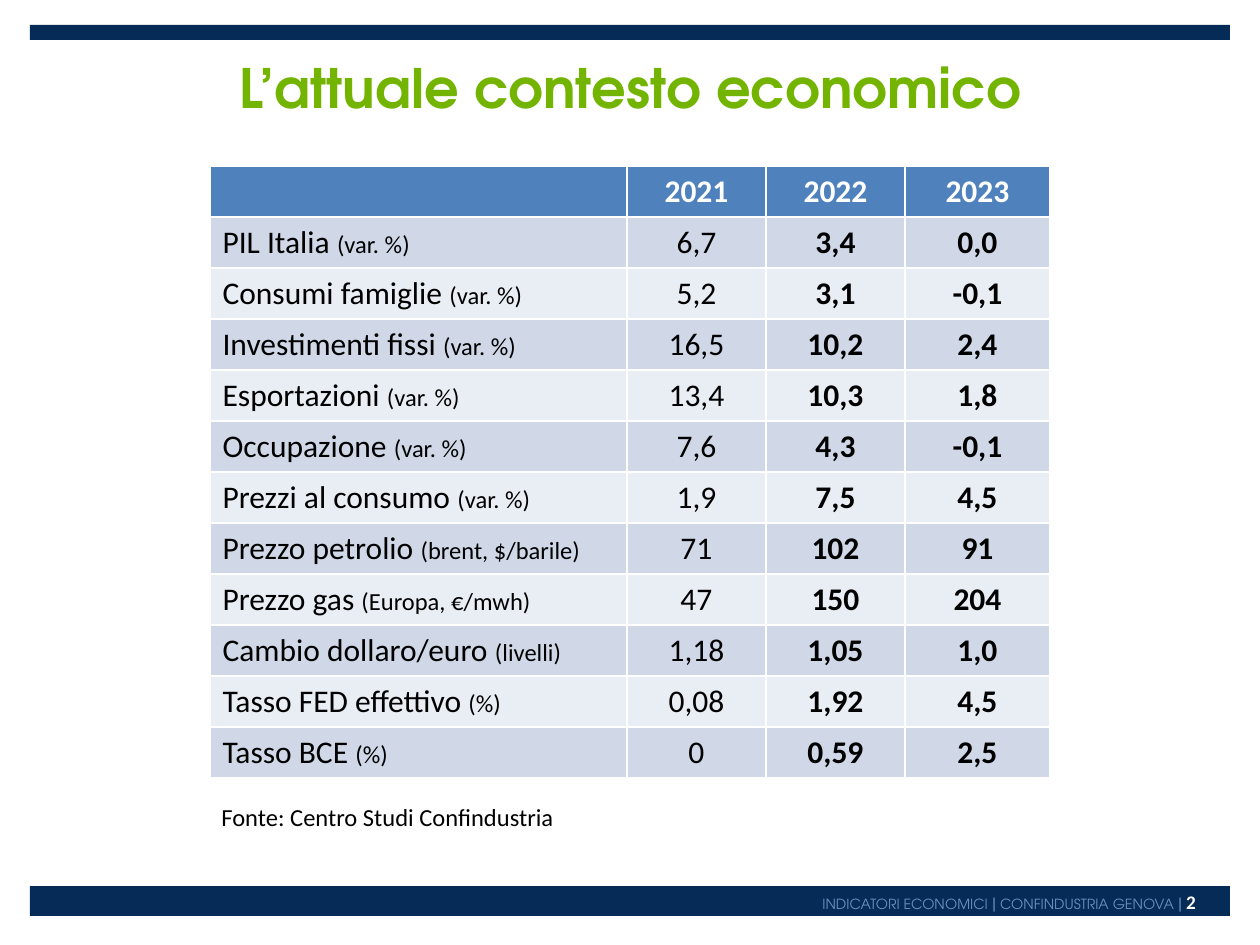
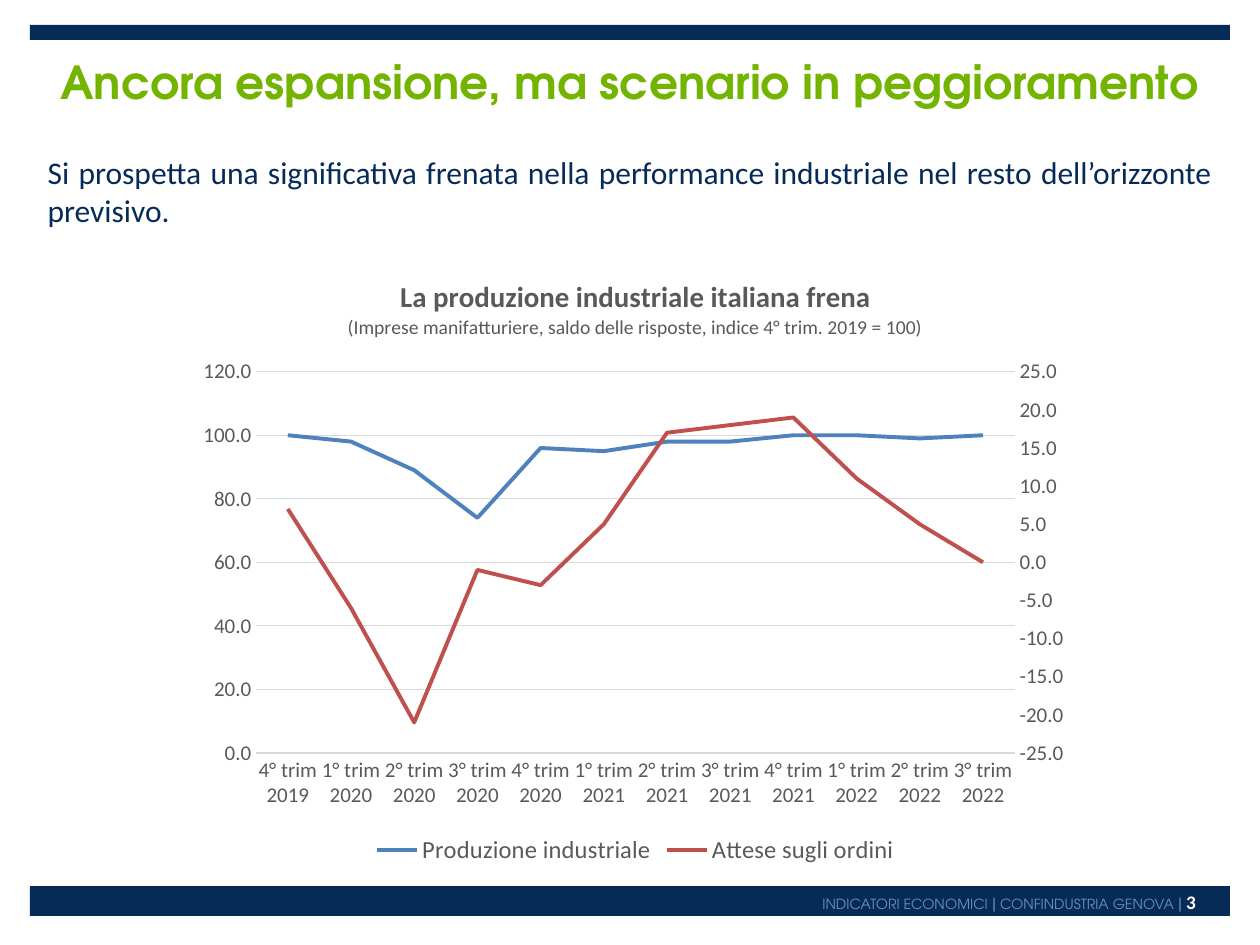
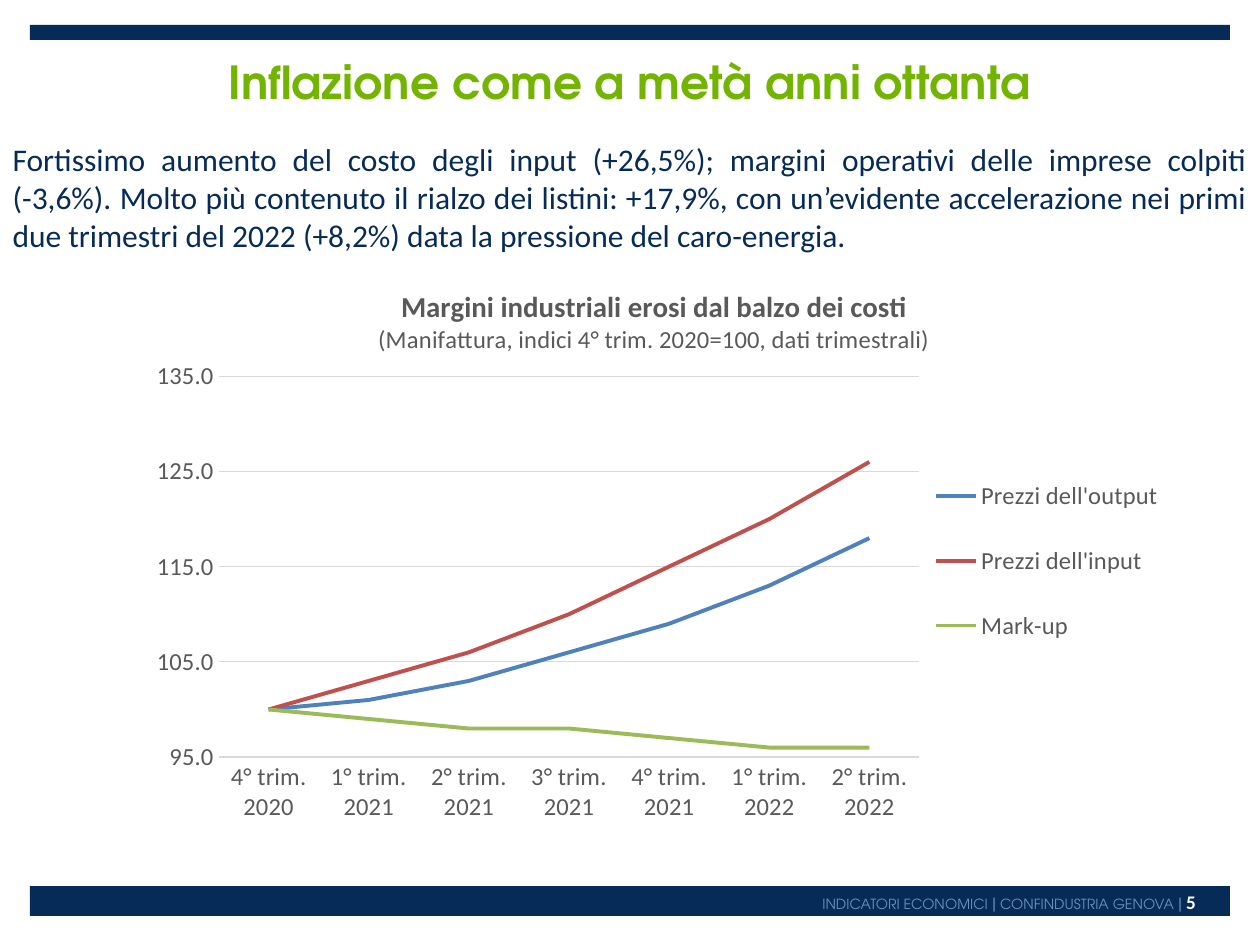
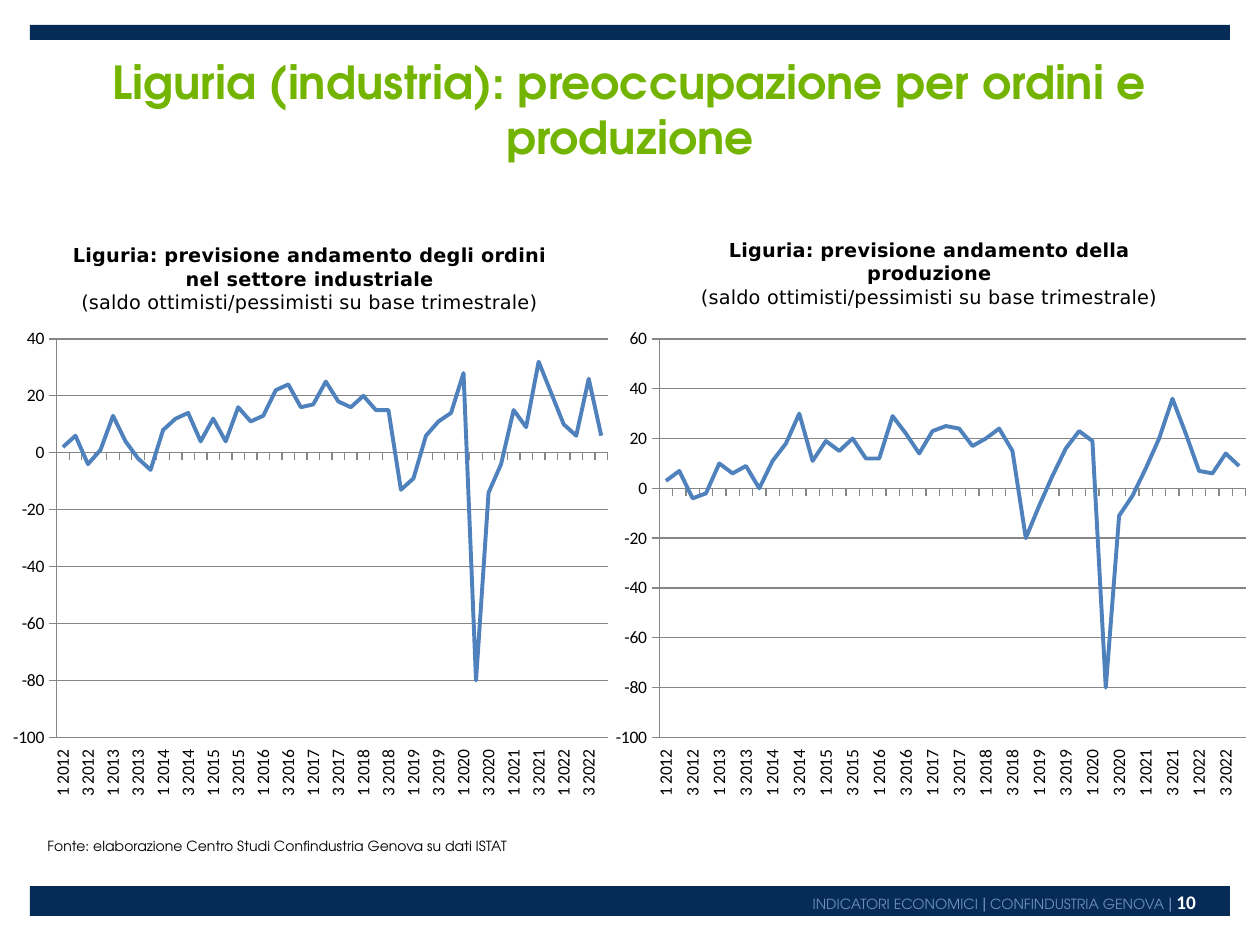
from copy import deepcopy

from lxml import etree
from pptx import Presentation
from pptx.chart.data import CategoryChartData
from pptx.dml.color import RGBColor
from pptx.enum.chart import (XL_CHART_TYPE, XL_LEGEND_POSITION,
                             XL_TICK_LABEL_POSITION, XL_TICK_MARK)
from pptx.enum.shapes import MSO_SHAPE
from pptx.enum.text import MSO_ANCHOR, MSO_AUTO_SIZE, PP_ALIGN
from pptx.oxml.ns import qn
from pptx.util import Emu, Pt

LINE = XL_CHART_TYPE.LINE
BOTTOM = XL_LEGEND_POSITION.BOTTOM
LOW = XL_TICK_LABEL_POSITION.LOW
TICK_NONE, TICK_OUT = XL_TICK_MARK.NONE, XL_TICK_MARK.OUTSIDE
RECT = MSO_SHAPE.RECTANGLE
TOP = MSO_ANCHOR.TOP
NO_FIT = MSO_AUTO_SIZE.NONE
LEFT, CENTER, RIGHT, JUSTIFY = (PP_ALIGN.LEFT, PP_ALIGN.CENTER,
                                PP_ALIGN.RIGHT, PP_ALIGN.JUSTIFY)

COLORS = {
    "navy": "062B57", "green": "73B400", "footer": "6D90BE",
    "white": "FFFFFF", "black": "000000", "gray": "595959",
    "grid": "D9D9D9", "axis": "868686",
    "blue": "4F81BD", "red": "C0504D", "olive": "9BBB59",
    "row_dark": "D0D8E8", "row_light": "E9EDF4",
}
SERIES_COLORS = ("blue", "red", "olive")
HEAD_FONT, TEXT_FONT, CHART_FONT = "TeX Gyre Adventor", "Calibri", "DejaVu Sans"
TITLE_ONLY, TITLE_AND_BODY = 5, 1


def px(length):
    return Emu(round(length * 914400 / 126))


def rgb(name):
    return RGBColor.from_string(COLORS[name])


def style(font, size, color, face=TEXT_FONT, bold=False):
    font.size, font.name, font.bold = Pt(size), face, bold
    font.color.rgb = rgb(color)


def set_layout(parent, after, inner=False, **place):
    """Place a chart part by fractions of the chart's size."""
    layout = parent.find(qn("c:layout"))
    if layout is None:
        layout = etree.Element(qn("c:layout"))
        if after is None:
            parent.insert(0, layout)
        else:
            parent.find(qn(after)).addnext(layout)
    for child in list(layout):
        layout.remove(child)
    manual = etree.SubElement(layout, qn("c:manualLayout"))
    if inner:
        etree.SubElement(manual, qn("c:layoutTarget"), val="inner")
    for mode in ("xMode", "yMode"):
        etree.SubElement(manual, qn("c:" + mode), val="edge")
    for key, value in place.items():
        etree.SubElement(manual, qn("c:" + key), val=str(value))


class Deck:
    """Holds the house style and the slide being built."""

    def __init__(self):
        self.prs = Presentation()
        self.prs.slide_width, self.prs.slide_height = px(1260), px(945)
        self.slide = None

    def new_slide(self, number, title, title_size=26, title_height=81,
                  layout=TITLE_ONLY):
        self.slide = self.prs.slides.add_slide(self.prs.slide_layouts[layout])
        self.band(25, 15)
        self.band(886, 30)
        self.footer(number)
        self.fill_placeholder(self.slide.shapes.title, (35, 48, 1190, title_height),
                              title, CENTER)
        style(self.slide.shapes.title.text_frame.paragraphs[0].font,
              title_size, "green", HEAD_FONT, True)

    def band(self, top, height):
        band = self.slide.shapes.add_shape(RECT, px(30), px(top), px(1200), px(height))
        band.shadow.inherit = False
        band.fill.solid()
        band.fill.fore_color.rgb = rgb("navy")
        band.line.fill.background()

    def footer(self, number):
        frame = self.slide.shapes.add_textbox(px(480), px(887), px(716), px(35)).text_frame
        frame.word_wrap = True
        frame.margin_left = frame.margin_right = frame.margin_top = frame.margin_bottom = 0
        line = frame.paragraphs[0]
        line.alignment, line.line_spacing = RIGHT, 1.15
        for text, size in (("INDICATORI ECONOMICI ", 8), ("|", 10),
                           (" CONFINDUSTRIA GENOVA ", 8), ("|", 10), (" ", 8)):
            run = line.add_run()
            run.text = text
            style(run.font, size, "footer", HEAD_FONT)
        page = line.add_run()
        page.text = str(number)
        style(page.font, 11, "white", bold=True)

    def fill_placeholder(self, holder, box, text, align):
        holder.left, holder.top, holder.width, holder.height = map(px, box)
        frame = holder.text_frame
        frame.text = text
        frame.word_wrap, frame.auto_size = True, NO_FIT
        frame.vertical_anchor = TOP
        frame.paragraphs[0].alignment = align
        return frame.paragraphs[0]

    def body(self, box, text):
        para = self.fill_placeholder(self.slide.placeholders[1], box, text, JUSTIFY)
        para.space_before = Pt(0)
        props = para._p.get_or_add_pPr()
        props.set("marL", "0")
        props.set("indent", "0")
        etree.SubElement(props, qn("a:buNone"))
        style(para.font, 18, "navy")

    def source(self, box, text, size, face=TEXT_FONT, spacing=1.0):
        frame = self.slide.shapes.add_textbox(*map(px, box)).text_frame
        frame.word_wrap = True
        frame.text = text
        para = frame.paragraphs[0]
        para.line_spacing = spacing
        style(para.font, size, "black", face)

    def table(self, left, top, widths, row_height, header, rows):
        grid = self.slide.shapes.add_table(
            len(rows) + 1, len(widths), px(left), px(top),
            px(sum(widths)), px(row_height * (len(rows) + 1))).table
        for column, width in zip(grid.columns, widths):
            column.width = px(width)
        for r, row in enumerate([header] + rows):
            grid.rows[r].height = px(row_height)
            fill = "blue" if r == 0 else "row_dark" if r % 2 else "row_light"
            for c, content in enumerate(row):
                cell = grid.cell(r, c)
                cell.fill.solid()
                cell.fill.fore_color.rgb = rgb(fill)
                para = cell.text_frame.paragraphs[0]
                para.alignment = CENTER if c else LEFT
                if c or r == 0:
                    para.text = content
                    style(para.font, 18, "black" if r else "white",
                          bold=r == 0 or c > 1)
                    continue
                # Row label with its unit in smaller type
                for text, size in zip(content, (18, 14)):
                    run = para.add_run()
                    run.text = text
                    style(run.font, size, "black")

    def line_chart(self, box, title, categories, series, scale, plot,
                   label_size, number_format="0.0", dense=False, title_at=None):
        data = CategoryChartData(number_format=number_format)
        data.categories = categories
        for name, values in series:
            data.add_series(name, values)
        chart = self.slide.shapes.add_chart(LINE, *map(px, box), data).chart
        ink = "black" if dense else "gray"
        style(chart.font, label_size, ink)
        chart.has_legend = False
        chart.plots[0].vary_by_categories = False
        for line, color in zip(chart.plots[0].series, SERIES_COLORS):
            line.smooth = False
            line.format.line.color.rgb = rgb(color)
            line.format.line.width = Pt(2.25)
        self.chart_title(chart, title, ink, CHART_FONT if dense else TEXT_FONT, title_at)
        self.chart_axes(chart, scale, label_size, number_format, dense)
        set_layout(chart._chartSpace.chart.plotArea, None, True,
                   **dict(zip("xywh", plot)))
        return chart

    def chart_title(self, chart, lines, ink, face, place):
        frame = chart.chart_title.text_frame
        for i, (text, size, bold) in enumerate(lines):
            para = frame.add_paragraph() if i else frame.paragraphs[0]
            run = para.add_run()
            run.text = text
            style(para.font, size, ink, face, bold)
            style(run.font, size, ink, face, bold)
        chart.chart_title.include_in_layout = False
        if place:
            set_layout(chart.chart_title._element, "c:tx", **dict(zip("xy", place)))

    def chart_axes(self, chart, scale, size, number_format, dense):
        values, periods = chart.value_axis, chart.category_axis
        values.minimum_scale, values.maximum_scale, values.major_unit = scale
        values.has_major_gridlines = True
        values.tick_labels.number_format = number_format
        values.tick_labels.number_format_is_linked = False
        rule = "axis" if dense else "grid"
        for axis in (values, periods):
            axis.major_tick_mark = TICK_OUT if dense else TICK_NONE
            axis.minor_tick_mark = TICK_NONE
            style(axis.tick_labels.font, size, "black" if dense else "gray")
        for line in (values.major_gridlines.format.line, periods.format.line):
            line.color.rgb = rgb(rule)
            line.width = Pt(0.75)
        if dense:
            values.format.line.color.rgb = rgb(rule)
            periods.tick_label_position = LOW
            turned = periods._element.find(qn("c:txPr")).find(qn("a:bodyPr"))
            turned.set("rot", "-5400000")
            turned.set("vert", "horz")
        else:
            values.format.line.fill.background()

    def legend(self, chart, **place):
        chart.has_legend = True
        chart.legend.position = BOTTOM
        chart.legend.include_in_layout = False
        style(chart.legend.font, 14, "gray")
        if place:
            set_layout(chart.legend._element, "c:legendPos", **place)

    def second_axis(self, chart, scale):
        """Move the last series to its own value axis on the right."""
        area = chart._chartSpace.chart.plotArea
        first = area.find(qn("c:lineChart"))
        second = deepcopy(first)
        first.remove(first.findall(qn("c:ser"))[-1])
        for ser in second.findall(qn("c:ser"))[:-1]:
            second.remove(ser)
        first.addnext(second)
        periods, values = (deepcopy(area.find(qn(tag))) for tag in ("c:catAx", "c:valAx"))
        area.find(qn("c:valAx")).addnext(values)
        values.addnext(periods)
        for ref, number in zip(second.findall(qn("c:axId")), ("5001", "5002")):
            ref.set("val", number)
        for axis, own, other in ((periods, "5001", "5002"), (values, "5002", "5001")):
            axis.find(qn("c:axId")).set("val", own)
            axis.find(qn("c:crossAx")).set("val", other)
        periods.find(qn("c:delete")).set("val", "1")
        values.find(qn("c:axPos")).set("val", "r")
        values.find(qn("c:crosses")).set("val", "max")
        values.remove(values.find(qn("c:majorGridlines")))
        scaling = values.find(qn("c:scaling"))
        for tag, value in zip(("c:min", "c:max"), scale):
            scaling.find(qn(tag)).set("val", str(value))
        values.find(qn("c:majorUnit")).set("val", str(scale[2]))


def context_slide(deck):
    deck.new_slide(2, "L’attuale contesto economico", title_size=31)
    var = "(var. %)"
    indicators = [
        ("PIL Italia ", var, "6,7", "3,4", "0,0"),
        ("Consumi famiglie ", var, "5,2", "3,1", "-0,1"),
        ("Investimenti fissi ", var, "16,5", "10,2", "2,4"),
        ("Esportazioni ", var, "13,4", "10,3", "1,8"),
        ("Occupazione ", var, "7,6", "4,3", "-0,1"),
        ("Prezzi al consumo ", var, "1,9", "7,5", "4,5"),
        ("Prezzo petrolio ", "(brent, $/barile)", "71", "102", "91"),
        ("Prezzo gas ", "(Europa, €/mwh)", "47", "150", "204"),
        ("Cambio dollaro/euro ", "(livelli)", "1,18", "1,05", "1,0"),
        ("Tasso FED effettivo ", "(%)", "0,08", "1,92", "4,5"),
        ("Tasso BCE ", "(%)", "0", "0,59", "2,5"),
    ]
    deck.table(210, 166, (417, 139, 139, 145), 51, ("", "2021", "2022", "2023"),
               [((name, unit), *years) for name, unit, *years in indicators])
    deck.source((209, 796, 525, 43), "Fonte: Centro Studi Confindustria", 14)


def production_slide(deck):
    deck.new_slide(3, "Ancora espansione, ma scenario in peggioramento",
                   layout=TITLE_AND_BODY)
    deck.body((35, 147, 1190, 87),
              "Si prospetta una significativa frenata nella performance industriale "
              "nel resto dell’orizzonte previsivo.")
    quarters = [f"{1 + i % 4}° trim {2019 + i // 4}" for i in range(3, 15)]
    chart = deck.line_chart(
        (184, 255, 903, 615),
        [("La produzione industriale italiana frena", 16.5, True),
         ("(Imprese manifatturiere, saldo delle risposte, indice 4° trim. 2019 = 100)",
          11.2, False)],
        quarters,
        [("Produzione industriale", (100, 98, 89, 74, 96, 95, 98, 98, 100, 100, 99, 100)),
         ("Attese sugli ordini", (7, -6, -21, -1, -3, 5, 17, 18, 19, 11, 5, 0))],
        (0, 120, 20), (0.08, 0.19, 0.84, 0.62), 12)
    deck.second_axis(chart, (-25, 25, 5))
    deck.legend(chart)


def inflation_slide(deck):
    deck.new_slide(5, "Inflazione come a metà anni ottanta", layout=TITLE_AND_BODY)
    deck.body((0, 134, 1260, 116),
              "Fortissimo aumento del costo degli input (+26,5%); margini operativi delle "
              "imprese colpiti (-3,6%). Molto più contenuto il rialzo dei listini: +17,9%, "
              "con un’evidente accelerazione nei primi due trimestri del 2022 (+8,2%) data "
              "la pressione del caro-energia.")
    quarters = [f"{1 + i % 4}° trim. {2020 + i // 4}" for i in range(3, 10)]
    chart = deck.line_chart(
        (123, 265, 1062, 586),
        [("Margini industriali erosi dal balzo dei costi", 16.5, True),
         ("(Manifattura, indici 4° trim. 2020=100, dati trimestrali)", 14, False)],
        quarters,
        [("Prezzi dell'output", (100, 101, 103, 106, 109, 113, 118)),
         ("Prezzi dell'input", (100, 103, 106, 110, 115, 120, 126)),
         ("Mark-up", (100, 99, 98, 98, 97, 96, 96))],
        (95, 135, 10), (0.09, 0.19, 0.66, 0.65), 14)
    deck.legend(chart, x=0.76, y=0.31, w=0.22, h=0.39)


def liguria_slide(deck):
    deck.new_slide(10, "Liguria (industria): preoccupazione per ordini e produzione",
                   title_height=117)
    deck.source((35, 829, 630, 32),
                "Fonte: elaborazione Centro Studi Confindustria Genova su dati ISTAT",
                8, HEAD_FONT, 1.15)
    quarters = [f"{q} {year}" for year in range(2012, 2023) for q in range(1, 5)]
    balance = ("(saldo ottimisti/pessimisti su base trimestrale)", 11, False)
    orders = (2, 6, -4, 1, 13, 4, -2, -6, 8, 12, 14, 4, 12, 4, 16, 11, 13, 22, 24, 16,
              17, 25, 18, 16, 20, 15, 15, -13, -9, 6, 11, 14, 28, -80, -14, -4, 15, 9,
              32, 21, 10, 6, 26, 6)
    output = (3, 7, -4, -2, 10, 6, 9, 0, 11, 18, 30, 11, 19, 15, 20, 12, 12, 29, 22, 14,
              23, 25, 24, 17, 20, 24, 15, -20, -7, 5, 16, 23, 19, -80, -11, -3, 8, 20,
              36, 22, 7, 6, 14, 9)
    panels = (
        ((1, 214, 619, 595), ("Liguria: previsione andamento degli ordini",
                              "nel settore industriale"),
         orders, 40, (0.09, 0.21, 0.89, 0.67), (0.11, 0.04)),
        ((600, 214, 659, 595), ("Liguria: previsione andamento della produzione",),
         output, 60, (0.09, 0.21, 0.89, 0.67), None),
    )
    for box, heading, values, highest, plot, title_at in panels:
        deck.line_chart(box, [(text, 11, True) for text in heading] + [balance],
                        quarters, [("Saldo", values)], (-100, highest, 20), plot, 10,
                        number_format="General", dense=True, title_at=title_at)


def main():
    deck = Deck()
    for build in (context_slide, production_slide, inflation_slide, liguria_slide):
        build(deck)
    deck.prs.save("out.pptx")


if __name__ == "__main__":
    main()
